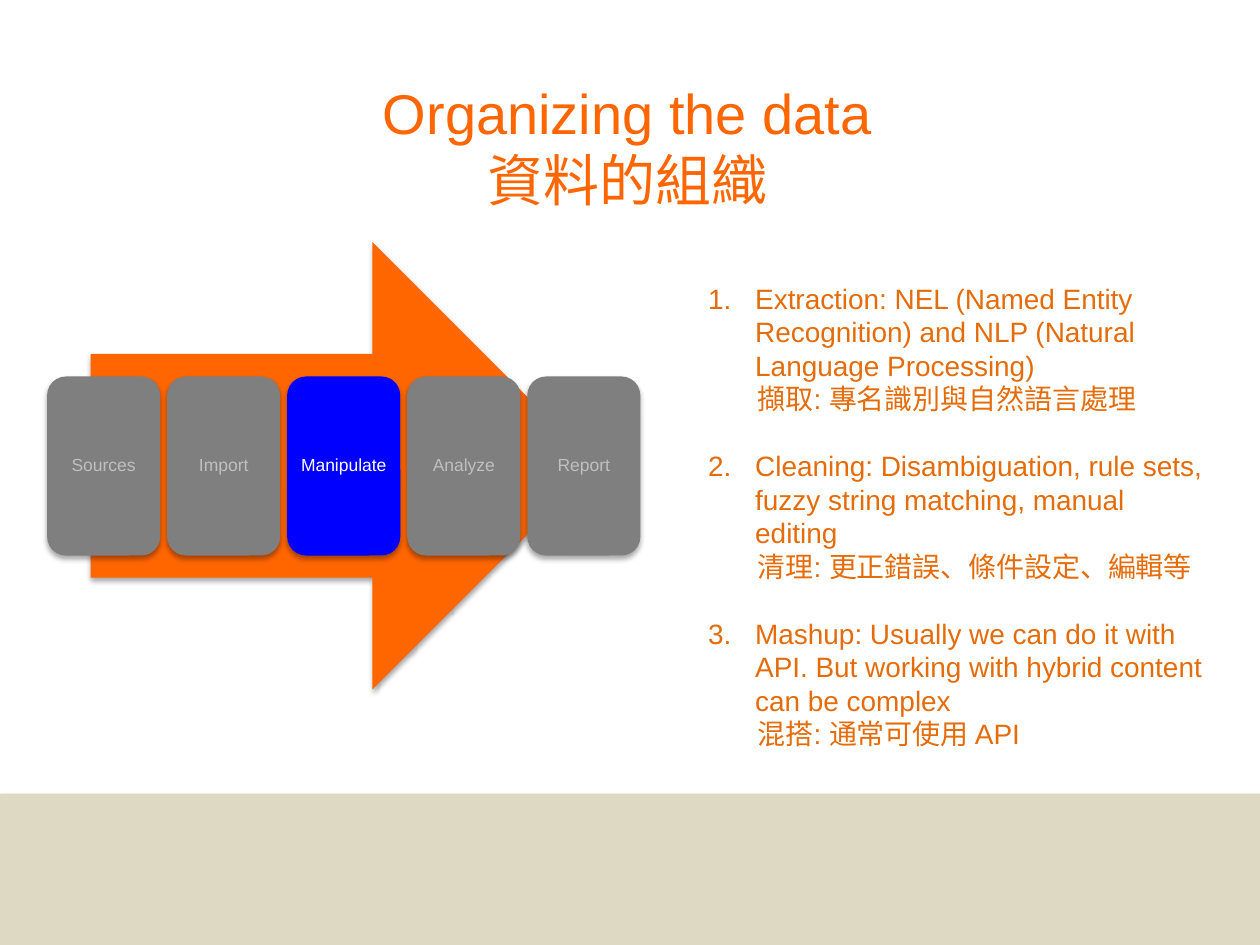
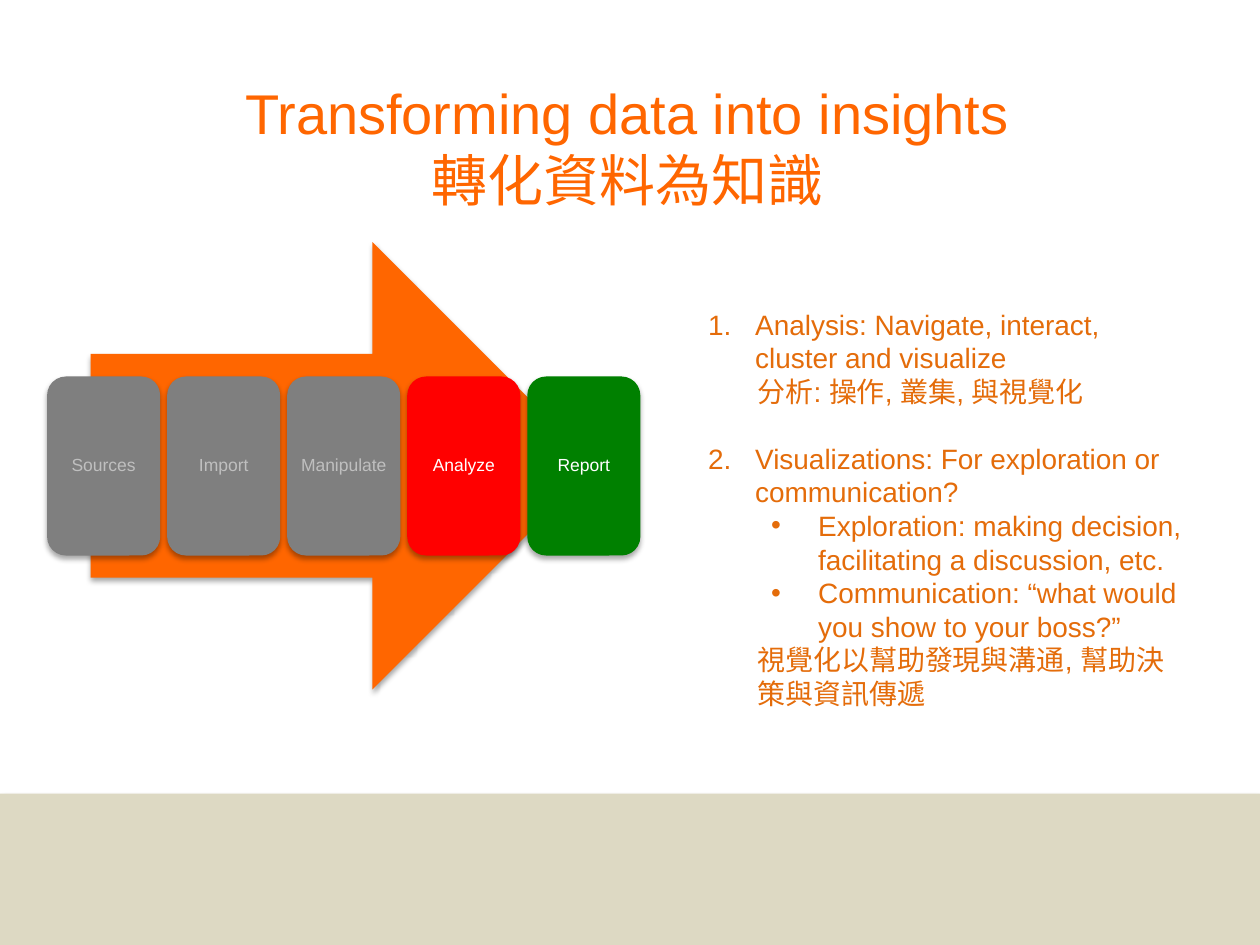
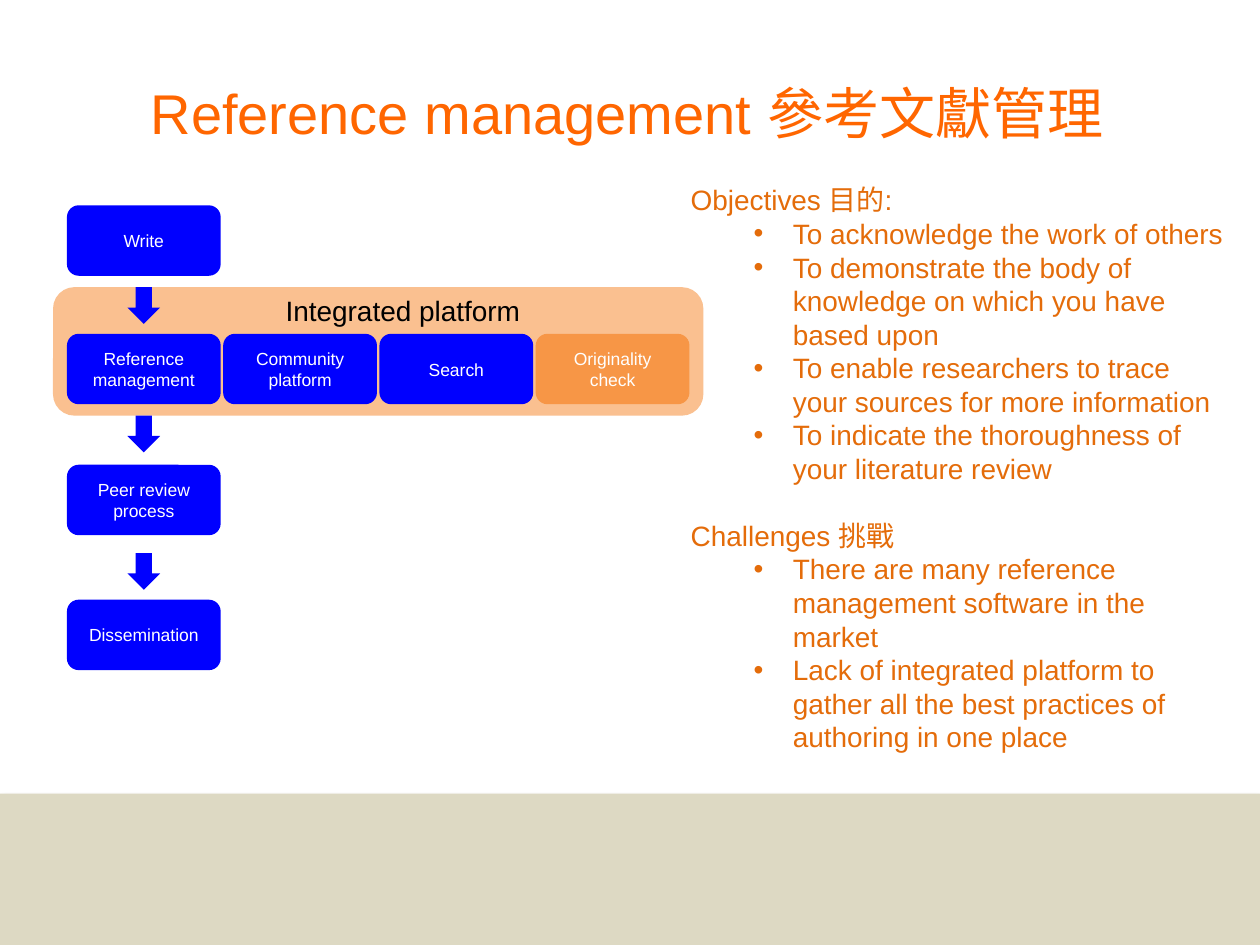
"""Build three slides on organizing data, insights and reference management."""
import pptx
import pptx.util
import pptx.dml.color
import pptx.enum.shapes
import pptx.enum.text
import pptx.oxml
import pptx.oxml.ns

Cm, Pt = pptx.util.Cm, pptx.util.Pt
KIND = pptx.enum.shapes.MSO_SHAPE
ALIGN = pptx.enum.text.PP_ALIGN
ANCHOR = pptx.enum.text.MSO_ANCHOR
FIT = pptx.enum.text.MSO_AUTO_SIZE

HUES = {
    "orange": "FF6600", "rust": "E46C0A", "sand": "DDD9C3", "gray": "7F7F7F",
    "pale": "BFBFBF", "white": "FFFFFF", "black": "000000", "blue": "0000FF",
    "red": "FF0000", "green": "008000", "peach": "FAC090", "amber": "F79646",
}
TITLE = (2.72, 1.45, 19.86, 3)
BAND = (0, 16, 25.4, 3.05)
STEPS = ["Sources", "Import", "Manipulate", "Analyze", "Report"]
STYLES = {
    "plain": (0, 0, None),
    "head": (0, 0, None),
    "num": (0.95, -0.95, "num"),
    "note": (1, 0, None),
    "dot": (2.22, -0.95, "dot"),
    "point": (2.06, -0.79, "dot"),
}
PAGES = [
    {
        "title": ["Organizing the data", "資料的組織"],
        "box": (14.02, 5.54, 10.52, 9.83),
        "live": {"Manipulate": "blue"},
        "body": [
            ("num", "Extraction: NEL (Named Entity Recognition) and NLP (Natural Language Processing)"),
            ("note", "擷取: 專名識別與自然語言處理"),
            ("num", "Cleaning: Disambiguation, rule sets, fuzzy string matching, manual editing"),
            ("note", "清理: 更正錯誤、條件設定、編輯等"),
            ("num", "Mashup: Usually we can do it with API. But working with hybrid content can be complex"),
            ("note", "混搭: 通常可使用 API"),
        ],
    },
    {
        "title": ["Transforming data into insights", "轉化資料為知識"],
        "box": (14.02, 6.07, 10.08, 9.83),
        "live": {"Analyze": "red", "Report": "green"},
        "body": [
            ("num", "Analysis: Navigate, interact, cluster and visualize"),
            ("note", "分析: 操作, 叢集, 與視覺化"),
            ("num", "Visualizations: For exploration or communication?"),
            ("dot", "Exploration: making decision, facilitating a discussion, etc."),
            ("dot", "Communication: “what would you show to your boss?”"),
            ("note", "視覺化以幫助發現與溝通, 幫助決策與資訊傳遞"),
        ],
    },
    {
        "title": ["Reference management 參考文獻管理"],
        "box": (13.67, 3.56, 11.4, 12.57),
        "body": [
            ("head", "Objectives 目的:"),
            ("point", "To acknowledge the work of others"),
            ("point", "To demonstrate the body of knowledge on which you have based upon"),
            ("point", "To enable researchers to trace your sources for more information"),
            ("point", "To indicate the thoroughness of your literature review"),
            ("head", "Challenges 挑戰"),
            ("point", "There are many reference management software in the market"),
            ("point", "Lack of integrated platform to gather all the best practices of authoring in one place"),
        ],
    },
]
ROWS = [4.14, 6.73, 9.37, 12.09]
DROPS = [5.79, 8.38, 11.15]
BLOCKS = [
    ("Write", 0, 0, "blue"),
    ("Reference management", 0, 1, "blue"),
    ("Community platform", 1, 1, "blue"),
    ("Search", 2, 1, "blue"),
    ("Originality check", 3, 1, "amber"),
    ("Peer review process", 0, 2, "blue"),
    ("Dissemination", 0, 3, "blue"),
]


def rgb(hue):
    """Give the colour for a name."""
    return pptx.dml.color.RGBColor.from_string(HUES[hue])


def place(shape, box):
    """Move a shape to a box in centimetres."""
    shape.left, shape.top, shape.width, shape.height = map(Cm, box)


def mark(props, tag, **attrs):
    """Add a bullet element to paragraph properties."""
    node = pptx.oxml.parse_xml(f"<a:{tag} {pptx.oxml.ns.nsdecls('a')}/>")
    for key, val in attrs.items():
        node.set(key, val)
    props.append(node)


def write(shape, items, size=10, hue="white", align=ALIGN.LEFT,
          anchor=ANCHOR.TOP, wrap=True, inset=None, line=None):
    """Fill a shape with styled paragraphs."""
    frame = shape.text_frame
    frame.auto_size, frame.word_wrap = FIT.NONE, wrap
    frame.vertical_anchor = anchor
    if inset is not None:
        frame.margin_left = frame.margin_right = Cm(inset)
        frame.margin_top = frame.margin_bottom = Cm(inset)
    count = 0
    for idx, (style, text) in enumerate(items):
        para = frame.add_paragraph() if idx else frame.paragraphs[0]
        left, hang, bullet = STYLES[style]
        para.alignment = align
        para.level = int(style in ("dot", "point"))
        para.space_before = Pt(19 if idx and style in ("num", "head") else 0)
        if line:
            para.line_spacing = line
        props = para._p.get_or_add_pPr()
        props.set("marL", str(Cm(left)))
        props.set("indent", str(Cm(hang)))
        if bullet == "num":
            count += 1
            mark(props, "buAutoNum", type="arabicPeriod", startAt=str(count))
        elif bullet == "dot":
            mark(props, "buChar", char="•")
        else:
            mark(props, "buNone")
        run = para.add_run()
        run.text = text
        run.font.size, run.font.name = Pt(size), "Arial"
        run.font.color.rgb = rgb(hue)


def draw(slide, kind, box, hue, shade=False):
    """Add a filled shape, with a soft shadow if asked."""
    shape = slide.shapes.add_shape(kind, *map(Cm, box))
    shape.fill.solid()
    shape.fill.fore_color.rgb = rgb(hue)
    shape.line.fill.background()
    shape.shadow.inherit = False
    if shade:
        glow = shape.element.spPr.find(pptx.oxml.ns.qn("a:effectLst"))
        glow.append(pptx.oxml.parse_xml(
            f'<a:outerShdw {pptx.oxml.ns.nsdecls("a")} blurRad="40000" dist="23000" '
            'dir="5400000" rotWithShape="0"><a:srgbClr val="000000">'
            '<a:alpha val="35000"/></a:srgbClr></a:outerShdw>'))
    return shape


def draw_steps(slide, live):
    """Draw the big arrow and its five steps."""
    draw(slide, KIND.RIGHT_ARROW, (1.83, 4.88, 10.19, 9.02), "orange", True)
    for col, step in enumerate(STEPS):
        box = (0.95 + col * 2.42, 7.59, 2.28, 3.61)
        card = draw(slide, KIND.ROUNDED_RECTANGLE, box, live.get(step, "gray"), True)
        write(card, [("plain", step)], hue="white" if step in live else "pale",
              align=ALIGN.CENTER, anchor=ANCHOR.MIDDLE, inset=0.1, line=0.9)


def draw_flow(slide):
    """Draw the authoring flow and its platform."""
    draw(slide, KIND.ROUNDED_RECTANGLE, (1.07, 5.79, 13.11, 2.59), "peach")
    for text, col, row, hue in BLOCKS:
        box = (1.35 + col * 3.15, ROWS[row], 3.1, 1.42)
        block = draw(slide, KIND.ROUNDED_RECTANGLE, box, hue)
        write(block, [("plain", text)], align=ALIGN.CENTER, anchor=ANCHOR.MIDDLE)
    for top in DROPS:
        draw(slide, KIND.DOWN_ARROW, (2.57, top, 0.66, 0.74), "blue")
    label = slide.shapes.add_textbox(*map(Cm, (5.51, 5.79, 5.31, 0.94)))
    write(label, [("plain", "Integrated platform")], size=16, hue="black", wrap=False)


def main():
    """Build and save the deck."""
    deck = pptx.Presentation()
    deck.slide_width, deck.slide_height = Cm(25.4), Cm(19.05)
    layout = deck.slide_layouts[1]
    for idx, page in enumerate(PAGES):
        slide = deck.slides.add_slide(layout)
        if not idx:
            band = draw(slide, KIND.RECTANGLE, BAND, "sand", True)
            layout.shapes.element.insert(2, band.element)
        title, body = slide.shapes.title, slide.placeholders[1]
        place(title, TITLE)
        write(title, [("plain", text) for text in page["title"]], size=32,
              hue="orange", align=ALIGN.CENTER)
        place(body, page["box"])
        write(body, page["body"], size=16, hue="rust")
        if "live" in page:
            draw_steps(slide, page["live"])
        else:
            draw_flow(slide)
    deck.save("out.pptx")


if __name__ == "__main__":
    main()
